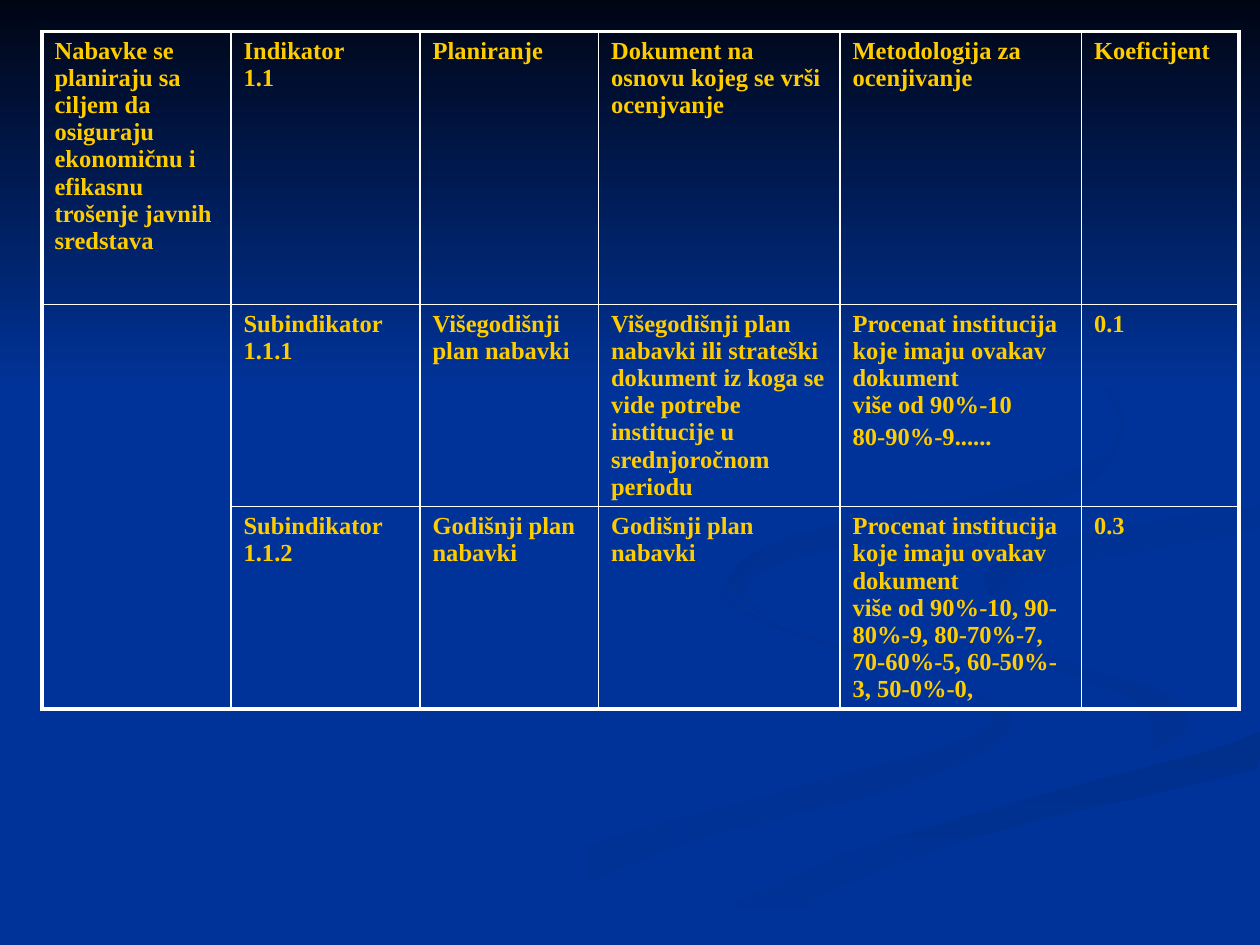
from copy import deepcopy

from lxml import etree
from pptx import Presentation
from pptx.dml.color import RGBColor
from pptx.enum import shapes
from pptx.oxml import ns
from pptx.util import Pt

COLORS = {"blue": "003399", "night": "000514", "gold": "FFCC00", "white": "FFFFFF",
          "haze": "003193", "shade": "002F8C", "mist": "003091", "dusk": "002F8E"}
FONT = "Times New Roman"
OUTER, INNER = 2.25, 1
WIDTH, HEIGHT = 720, 540
SMOOTH_STEPS = 5
COLUMNS = [108, 108, 102, 138, 138, 90]
ROWS = [156, 115.5, 115.5]
INDICATORS = [
    ["Nabavke se planiraju sa ciljem da osiguraju ekonomičnu i efikasnu trošenje javnih sredstava",
     "Indikator\n1.1", "Planiranje", "Dokument na osnovu kojeg se vrši ocenjvanje",
     "Metodologija za ocenjivanje", "Koeficijent"],
    ["", "Subindikator\n1.1.1", "Višegodišnji plan nabavki",
     "Višegodišnji plan nabavki ili strateški dokument iz koga se vide potrebe institucije "
     "u srednjoročnom periodu",
     ["Procenat institucija koje imaju ovakav dokument\nviše od 90%-10", "80-90%-9......"], "0.1"],
    ["", "Subindikator\n1.1.2", "Godišnji plan nabavki", "Godišnji plan nabavki",
     "Procenat institucija koje imaju ovakav dokument\nviše od 90%-10, 90-80%-9, 80-70%-7, "
     "70-60%-5, 60-50%-3, 50-0%-0,", "0.3"],
]
SWIRLS = [
    ("blue", "haze", 0, [
        (414, 331), (420, 350), (502, 378), (562, 400), (552, 422), (469, 446),
        (330, 485), (216, 539), (260, 539), (383, 485), (520, 448), (576, 418),
        (562, 398), (491, 373), (428, 350)]),
    ("blue", "haze", 45, [
        (521, 334), (528, 352), (587, 377), (648, 401), (659, 424), (644, 436),
        (678, 418), (670, 398), (598, 374), (535, 352)]),
    ("shade", "blue", 90, [
        (362, 539), (411, 539), (500, 498), (591, 469), (719, 439), (719, 418),
        (650, 439), (550, 466), (454, 499)]),
    ("blue", None, 0, [
        (522, 334), (571, 366), (652, 389), (679, 411), (656, 430), (562, 456),
        (446, 492), (343, 539), (374, 539), (477, 490), (599, 453), (719, 418),
        (719, 387), (624, 366), (562, 334), (612, 307), (719, 289), (719, 279),
        (567, 304)]),
    ("mist", "blue", 45, [
        (562, 331), (570, 344), (595, 357), (580, 340), (607, 323), (719, 302),
        (719, 289), (612, 307), (570, 322)]),
    ("dusk", "blue", 45, [
        (549, 168), (609, 201), (640, 241), (620, 266), (549, 286), (450, 307),
        (416, 332), (448, 360), (427, 338), (449, 320), (549, 300), (624, 276),
        (641, 233), (607, 198)]),
]


def rgb(name):
    """Return the named colour."""
    return RGBColor.from_string(COLORS[name])


def paint(sp, start, end=None, angle=0):
    """Fill a shape with a plain colour or a clockwise linear gradient."""
    sp.shadow.inherit = False
    sp.line.fill.background()
    if end is None:
        sp.fill.solid()
        sp.fill.fore_color.rgb = rgb(start)
        return
    sp.fill.gradient()
    sp.fill.gradient_angle = -angle % 360
    for stop, name in zip(sp.fill.gradient_stops, (start, end)):
        stop.color.rgb = rgb(name)


def spline(a, b, c, d, t):
    """Return the Catmull-Rom value between b and c."""
    return b + t / 2 * (c - a + t * (2 * a - 5 * b + 4 * c - d + t * (3 * (b - c) + d - a)))


def smooth(points):
    """Return a closed smooth outline through the points, kept on the slide."""
    outline = []
    for i in range(len(points)):
        near = [points[(i + k) % len(points)] for k in (-1, 0, 1, 2)]
        for step in range(SMOOTH_STEPS):
            x, y = (spline(*axis, step / SMOOTH_STEPS) for axis in zip(*near))
            outline.append((min(x, WIDTH), min(y, HEIGHT)))
    return outline


def add_swirl(s, start, end, angle, points):
    """Draw one closed background ribbon."""
    outline = smooth(points)
    builder = s.shapes.build_freeform(*outline[0], scale=Pt(1))
    builder.add_line_segments(outline[1:], close=True)
    paint(builder.convert_to_shape(), start, end, angle)


def write(p, content, size=14, color="gold", bold=True, before=0):
    """Write formatted text, line breaks included, into a paragraph."""
    p.text = content
    if before:
        p.space_before = Pt(before)
    for r in p.runs:
        r.font.name, r.font.size, r.font.bold = FONT, Pt(size), bold
        r.font.color.rgb = rgb(color)
    for br in p._p.findall(ns.qn("a:br")):
        br.insert(0, deepcopy(p.runs[0]._r.rPr))


def add_borders(cell, **widths):
    """Give a cell white borders of the given widths."""
    tcPr = cell._tc.get_or_add_tcPr()
    for side, width in widths.items():
        ln = etree.SubElement(tcPr, ns.qn(f"a:ln{side}"), w=str(Pt(width)))
        fill = etree.SubElement(ln, ns.qn("a:solidFill"))
        etree.SubElement(fill, ns.qn("a:srgbClr"), val=COLORS["white"])


def add_indicator_table(s):
    """Add the table of indicators with a heavy outer frame."""
    table = s.shapes.add_table(len(ROWS), len(COLUMNS), Pt(24), Pt(18),
                               Pt(sum(COLUMNS)), Pt(sum(ROWS))).table
    table.first_row = table.horz_banding = False
    for column, width in zip(table.columns, COLUMNS):
        column.width = Pt(width)
    for row, height in zip(table.rows, ROWS):
        row.height = Pt(height)
    table.cell(1, 0).merge(table.cell(2, 0))
    last_row, last_col = len(ROWS) - 1, len(COLUMNS) - 1
    for i, contents in enumerate(INDICATORS):
        for j, content in enumerate(contents):
            cell = table.cell(i, j)
            at_bottom = i == last_row or cell.is_merge_origin
            add_borders(cell, L=INNER if j else OUTER, R=OUTER if j == last_col else INNER,
                        T=INNER if i else OUTER, B=OUTER if at_bottom else INNER)
            cell.fill.background()
            tf = cell.text_frame
            paragraphs = content if isinstance(content, list) else [content]
            for k, line in enumerate(paragraphs):
                p = tf.add_paragraph() if k else tf.paragraphs[0]
                write(p, line, before=2.8 if k else 0)


def main():
    """Build and save the slide."""
    prs = Presentation()
    prs.slide_width, prs.slide_height = Pt(WIDTH), Pt(HEIGHT)
    s = prs.slides.add_slide(prs.slide_layouts[6])
    s.background.fill.solid()
    s.background.fill.fore_color.rgb = rgb("blue")
    for swirl in SWIRLS:
        add_swirl(s, *swirl)
    sky = s.shapes.add_shape(shapes.MSO_SHAPE.RECTANGLE, 0, 0, Pt(WIDTH), Pt(222))
    paint(sky, "night", "blue", 90)
    add_indicator_table(s)
    prs.save("out.pptx")


if __name__ == "__main__":
    main()
